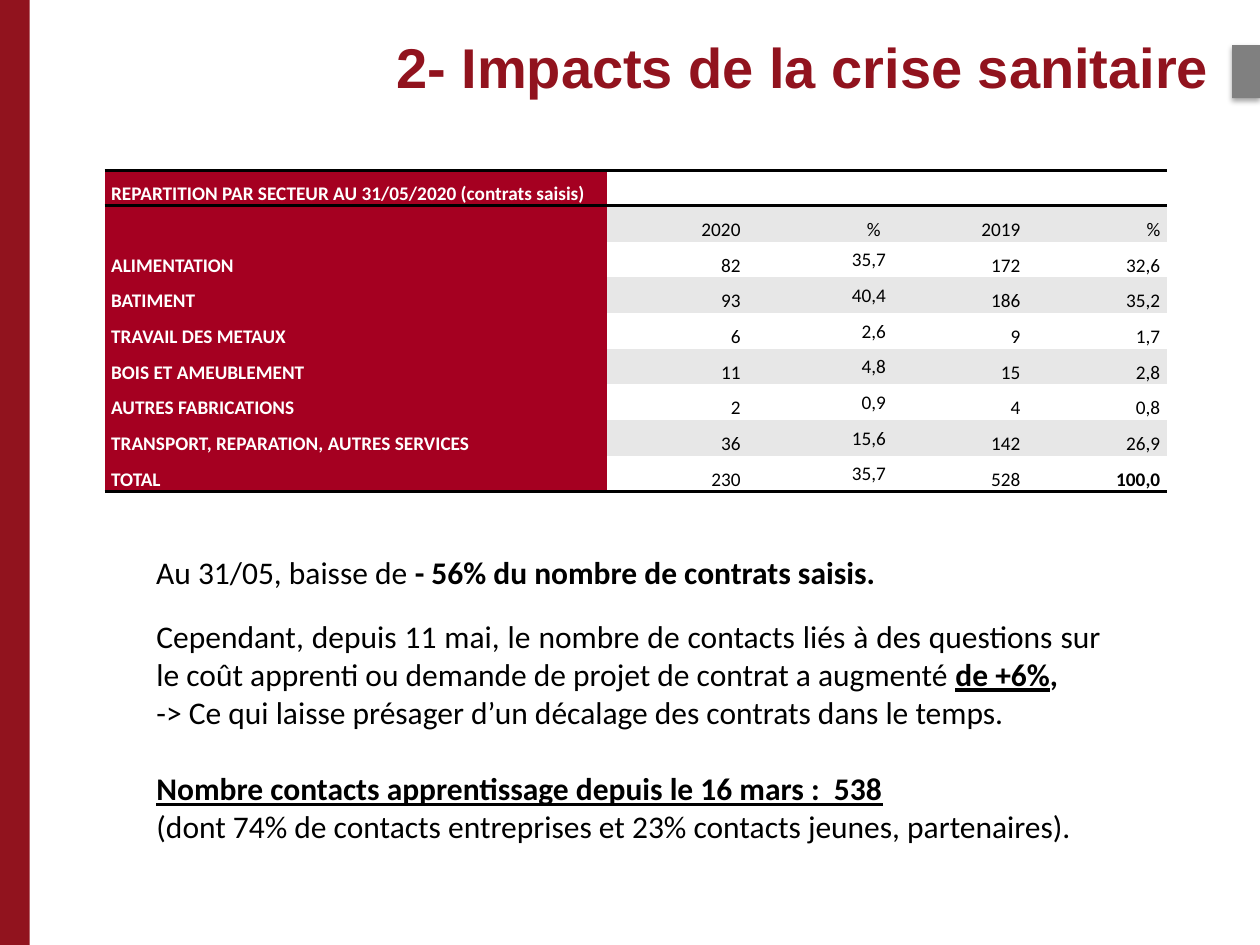
from dataclasses import dataclass

from lxml.etree import SubElement as Sub
from pptx import Presentation
from pptx.dml.color import RGBColor as Rgb
from pptx.enum.shapes import MSO_SHAPE as Form
from pptx.enum.text import MSO_ANCHOR as Anchor, MSO_AUTO_SIZE as Fit, PP_ALIGN as Align
from pptx.oxml.ns import qn
from pptx.util import Cm, Pt

PLAIN_GRID = "{2D5ABB26-0587-4C30-8999-92F81FD0307C}"


@dataclass(frozen=True)
class Theme:
    brand: str = "91131E"
    label: str = "A50021"
    band: str = "E7E7E7"
    grey: str = "808080"
    white: str = "FFFFFF"
    black: str = "000000"
    head: str = "Arial"
    body: str = "Calibri"
    big: int = 32
    mid: int = 18
    small: int = 11
    rule: int = 2


class Deck:
    """Holds the theme and the slide being filled."""

    def __init__(self, theme):
        self.theme = theme
        self.file = Presentation()
        self.file.slide_width, self.file.slide_height = Cm(25.4), Cm(19.05)
        self.slide = self.file.slides.add_slide(self.file.slide_layouts[1])

    def place(self, shape, box):
        shape.left, shape.top, shape.width, shape.height = map(Cm, box)

    def style(self, run, size, color, face=None, bold=False, line=False):
        font = run.font
        font.name, font.size = face or self.theme.body, Pt(size)
        font.bold, font.underline = bold, line
        font.color.rgb = Rgb.from_string(color)

    def title(self, text, box):
        shape = self.slide.shapes.title
        self.place(shape, box)
        frame = shape.text_frame
        frame.text = text
        frame.auto_size, frame.vertical_anchor = Fit.NONE, Anchor.TOP
        par = frame.paragraphs[0]
        par.alignment = Align.RIGHT
        self.style(par.runs[0], self.theme.big, self.theme.brand, self.theme.head, True)

    def block(self, box, color, shade=False):
        shape = self.slide.shapes.add_shape(Form.RECTANGLE, *map(Cm, box))
        shape.fill.solid()
        shape.fill.fore_color.rgb = Rgb.from_string(color)
        shape.line.fill.background()
        shape.shadow.inherit = False
        if shade:
            drop = Sub(shape._element.spPr.find(qn("a:effectLst")), qn("a:outerShdw"),
                       blurRad=str(Pt(3.1)), dist=str(Pt(1.8)), dir="5400000", rotWithShape="0")
            tone = Sub(drop, qn("a:srgbClr"), val=self.theme.black)
            Sub(tone, qn("a:alpha"), val="35000")

    def note(self, pars, box):
        self.prose(self.slide.shapes.add_textbox(*map(Cm, box)), pars, Align.LEFT)

    def body(self, pars, box):
        shape = self.slide.placeholders[1]
        self.place(shape, box)
        self.prose(shape, pars, Align.JUSTIFY)

    def prose(self, shape, pars, align):
        """Each paragraph is (space before, [(text, bold, underlined), ...])."""
        frame = shape.text_frame
        frame.word_wrap, frame.auto_size = True, Fit.NONE
        frame.vertical_anchor = Anchor.TOP
        for i, (gap, runs) in enumerate(pars):
            par = frame.add_paragraph() if i else frame.paragraphs[0]
            props = par._p.get_or_add_pPr()
            props.set("marL", "0")
            props.set("indent", "0")
            Sub(props, qn("a:buNone"))
            par.alignment, par.space_before = align, Pt(gap)
            for text, bold, line in runs:
                run = par.add_run()
                run.text = text
                self.style(run, self.theme.mid, self.theme.black, bold=bold, line=line)

    def border(self, cell, side):
        line = Sub(cell._tc.get_or_add_tcPr(), qn("a:" + side), w=str(Pt(self.theme.rule)))
        Sub(Sub(line, qn("a:solidFill")), qn("a:srgbClr"), val=self.theme.black)

    def cell(self, cell, text, color, fill, bold, right):
        cell.vertical_anchor = Anchor.BOTTOM
        cell.margin_left = cell.margin_right = Cm(0.13)
        cell.margin_top = cell.margin_bottom = 0
        cell.fill.solid()
        cell.fill.fore_color.rgb = Rgb.from_string(fill)
        par = cell.text_frame.paragraphs[0]
        par.text = text
        par.alignment = Align.RIGHT if right else Align.LEFT
        if text:
            self.style(par.runs[0], self.theme.small, color, bold=bold)
        else:
            Sub(par._p, qn("a:endParaRPr"), sz=str(self.theme.small * 100))

    def table(self, rows, left, top, cols, high):
        look, last = self.theme, len(rows) - 1
        shape = self.slide.shapes.add_table(len(rows), len(cols), Cm(left), Cm(top),
                                            Cm(sum(cols)), Cm(high * len(rows)))
        grid = shape.table
        grid.first_row = grid.horz_banding = False
        grid._tbl.tblPr.find(qn("a:tableStyleId")).text = PLAIN_GRID
        for col, wide in zip(grid.columns, cols):
            col.width = Cm(wide)
        for r, row in enumerate(rows):
            grid.rows[r].height = Cm(high)
            for c, text in enumerate(row):
                cell = grid.cell(r, c)
                if r == 0:
                    self.border(cell, "lnT")
                if r in (0, last):
                    self.border(cell, "lnB")
                if c == 0:
                    self.cell(cell, text, look.white, look.label, True, False)
                else:
                    fill = look.band if r % 2 else look.white
                    final = r == last and c == len(cols) - 1
                    self.cell(cell, text, look.black, fill, final, True)
                if c == 2 and r > 1:
                    cell.vertical_anchor = Anchor.MIDDLE
                    cell.margin_left = cell.margin_right = cell.margin_top = Cm(0.02)


ROWS = [
    ("REPARTITION PAR SECTEUR AU 31/05/2020 (contrats saisis)", "", "", "", ""),
    ("", "2020", "%", "2019", "%"),
    ("ALIMENTATION", "82", "35,7", "172", "32,6"),
    ("BATIMENT", "93", "40,4", "186", "35,2"),
    ("TRAVAIL DES METAUX", "6", "2,6", "9", "1,7"),
    ("BOIS ET AMEUBLEMENT", "11", "4,8", "15", "2,8"),
    ("AUTRES FABRICATIONS", "2", "0,9", "4", "0,8"),
    ("TRANSPORT, REPARATION, AUTRES SERVICES", "36", "15,6", "142", "26,9"),
    ("TOTAL", "230", "35,7", "528", "100,0"),
]
DROP = [(0, [("Au 31/05, baisse de ", False, False),
             ("- 56% du nombre de contrats saisis.", True, False)])]
CALLS = [
    (0, [("Cependant, depuis 11 mai, le nombre de contacts liés à des questions sur le coût "
          "apprenti ou demande de projet de contrat a augmenté ", False, False),
         ("de +6%", True, True), (",", True, False)]),
    (0, [("-> Ce qui laisse présager d’un décalage des contrats dans le temps.", False, False)]),
    (22, [("Nombre contacts apprentissage depuis le 16 mars :  538", True, True)]),
    (0, [("(dont 74% de contacts entreprises et 23% contacts jeunes, partenaires).",
          False, False)]),
]


def main():
    look = Theme()
    deck = Deck(look)
    deck.block((0, 0, 0.6, 19.05), look.brand)
    deck.title("2- Impacts de la crise sanitaire", (1.3, 0.53, 23.34, 1.63))
    deck.block((24.84, 0.91, 0.56, 1.07), look.grey, shade=True)
    deck.table(ROWS, 2.11, 3.43, [10.13] + [2.82] * 4, 0.72)
    deck.note(DROP, (2.9, 11.02, 19, 1.02))
    deck.body(CALLS, (2.9, 12.32, 19.56, 4.88))
    deck.file.save("out.pptx")


if __name__ == "__main__":
    main()
